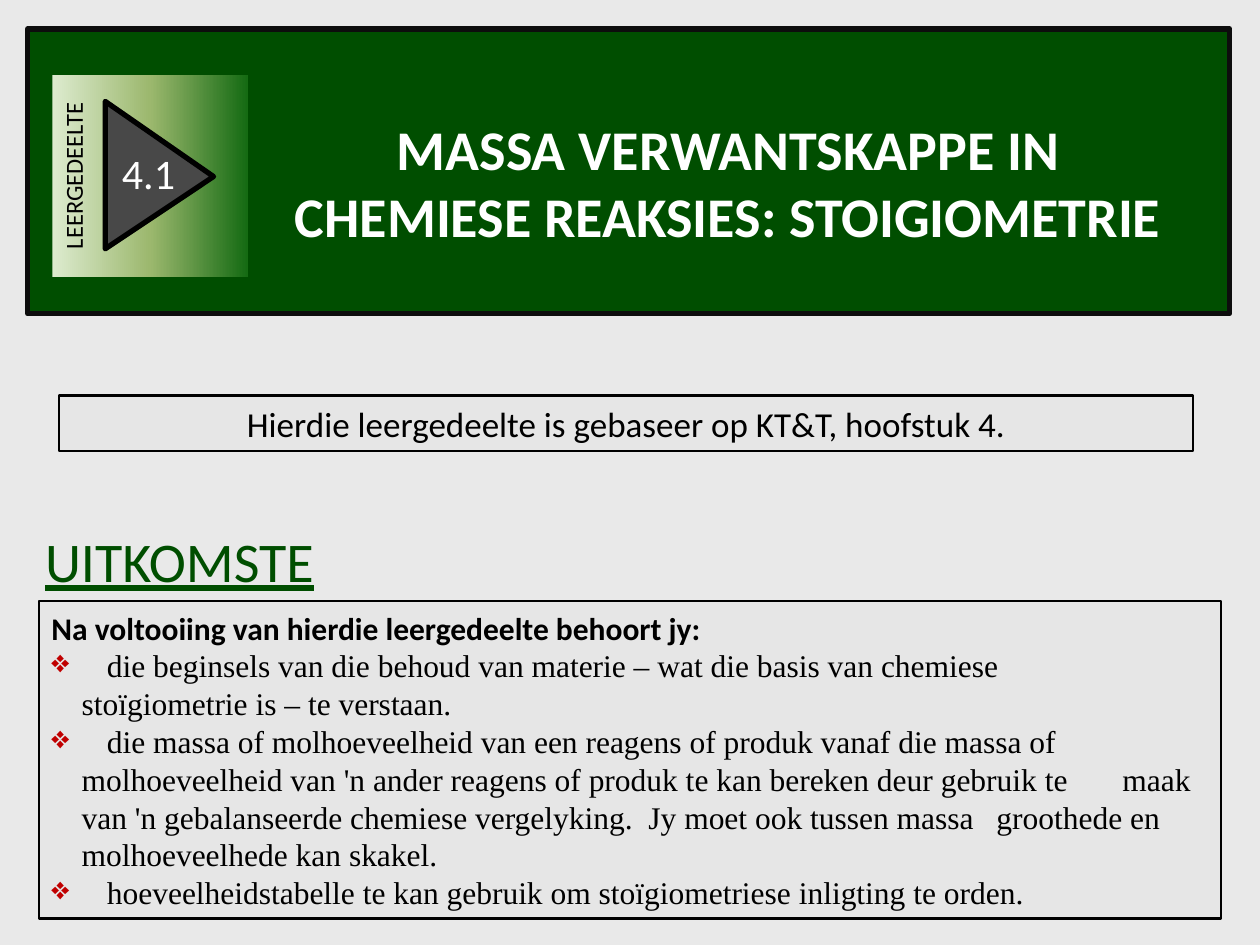
"""Build the opening slide of study section 4.1 on stoichiometry."""
from copy import deepcopy

from lxml.etree import SubElement
from pptx import Presentation
from pptx.dml.color import RGBColor
from pptx.enum.shapes import MSO_SHAPE as Shape
from pptx.enum.text import MSO_ANCHOR as Anchor, PP_ALIGN as Align
from pptx.oxml.ns import qn
from pptx.util import Inches, Pt

BACKGROUND = RGBColor(0xE9, 0xE9, 0xE9)
PANEL = RGBColor(0xE6, 0xE6, 0xE6)
GREEN = RGBColor(0x00, 0x4E, 0x00)
BANNER_EDGE = RGBColor(0x0D, 0x0D, 0x0D)
GREY = RGBColor(0x48, 0x48, 0x48)
BLACK = RGBColor(0x00, 0x00, 0x00)
WHITE = RGBColor(0xFF, 0xFF, 0xFF)
GRADIENT = [
    (0, RGBColor(0xDD, 0xEB, 0xCF)),
    (0.5, RGBColor(0x9C, 0xB8, 0x6E)),
    (1, RGBColor(0x15, 0x6B, 0x13)),
]
OUTCOMES = [
    "\tdie beginsels van die behoud van materie – wat die basis van chemiese "
    "\tstoїgiometrie is – te verstaan.",
    "\tdie massa of molhoeveelheid van een reagens of produk vanaf die massa of "
    "\tmolhoeveelheid van 'n ander reagens of produk te kan bereken deur gebruik te "
    "\tmaak van 'n gebalanseerde chemiese vergelyking.  Jy moet ook tussen massa "
    "\tgroothede en molhoeveelhede kan skakel.",
    "\thoeveelheidstabelle te kan gebruik om stoїgiometriese inligting te orden.",
]


def add_box(shapes, kind, box, fill=None, line=None, width=1.5):
    shape = shapes.add_shape(kind, *[Inches(value) for value in box])
    shape.shadow.inherit = False
    if fill is None:
        shape.fill.background()
    else:
        shape.fill.solid()
        shape.fill.fore_color.rgb = fill
    if line is None:
        shape.line.fill.background()
    else:
        shape.line.color.rgb = line
        shape.line.width = Pt(width)
    shape.text_frame.word_wrap = True
    shape.text_frame.vertical_anchor = Anchor.TOP
    return shape


def add_text(paragraph, text, size, color=BLACK, align=Align.LEFT, name="Calibri"):
    paragraph.alignment = align
    run = paragraph.add_run()
    run.text = text
    run.font.size = Pt(size)
    run.font.name = name
    run.font.color.rgb = color
    return run


presentation = Presentation()
presentation.slide_width = Inches(10)
presentation.slide_height = Inches(7.5)
slide = presentation.slides.add_slide(presentation.slide_layouts[6])
slide.background.fill.solid()
slide.background.fill.fore_color.rgb = BACKGROUND

source_note = add_box(slide.shapes, Shape.RECTANGLE, (0.47, 3.14, 9, 0.44), PANEL, BLACK)
source_note.text_frame.vertical_anchor = Anchor.MIDDLE
add_text(source_note.text_frame.paragraphs[0],
         "Hierdie leergedeelte is gebaseer op KT&T, hoofstuk 4.", 20, align=Align.CENTER)

add_box(slide.shapes, Shape.RECTANGLE, (0.22, 0.23, 9.54, 2.26), GREEN, BANNER_EDGE, 3)

title = slide.shapes.add_textbox(Inches(2.11), Inches(0.86), Inches(7.34), Inches(1.18))
title.text_frame.word_wrap = True
title_run = add_text(title.text_frame.paragraphs[0],
                     "MASSA VERWANTSKAPPE IN CHEMIESE REAKSIES: STOIGIOMETRIE",
                     32, WHITE, Align.CENTER)
title_run.font.bold = True

badge = slide.shapes.add_group_shape()
label = add_box(badge.shapes, Shape.RECTANGLE, (0.39, 0.62, 1.6, 1.55))
label.rotation = 270
label.fill.gradient()
label.fill.gradient_angle = 270
stop_list = label.element.spPr.find(qn("a:gradFill")).find(qn("a:gsLst"))
stop_list.append(deepcopy(stop_list[-1]))
for stop, (position, color) in zip(label.fill.gradient_stops, GRADIENT):
    stop.position = position
    stop.color.rgb = color
add_text(label.text_frame.paragraphs[0], "LEERGEDEELTE", 14, align=Align.CENTER)

arrow = add_box(badge.shapes, Shape.ISOSCELES_TRIANGLE, (0.68, 0.96, 1.17, 0.86), GREY, BLACK, 3)
arrow.rotation = 90
arrow.adjustments[0] = 0.51

number = badge.shapes.add_textbox(Inches(0.87), Inches(1.12), Inches(0.63), Inches(0.5))
number.text_frame.word_wrap = False
add_text(number.text_frame.paragraphs[0], "4.1", 24, WHITE)

heading = slide.shapes.add_textbox(Inches(0.26), Inches(4.13), Inches(2.67), Inches(0.64))
heading.text_frame.word_wrap = True
add_text(heading.text_frame.paragraphs[0], "UITKOMSTE", 32, GREEN).font.underline = True

outcomes = add_box(slide.shapes, Shape.RECTANGLE, (0.31, 4.77, 9.38, 2.52), PANEL, BLACK)
frame = outcomes.text_frame
frame.vertical_anchor = Anchor.MIDDLE
intro_run = add_text(frame.paragraphs[0],
                     "Na voltooiing van hierdie leergedeelte behoort jy:", 18)
intro_run.font.bold = True
for outcome in OUTCOMES:
    paragraph = frame.add_paragraph()
    add_text(paragraph, outcome, 18, name="Times New Roman")
    properties = paragraph._p.get_or_add_pPr()
    properties.set("marL", str(Inches(0.24)))
    properties.set("indent", str(Inches(-0.24)))
    bullet_color = SubElement(properties, qn("a:buClr"))
    SubElement(bullet_color, qn("a:srgbClr"), val="C00000")
    SubElement(properties, qn("a:buChar"), char="❖")
    tabs = SubElement(properties, qn("a:tabLst"))
    SubElement(tabs, qn("a:tab"), pos=str(Inches(0.44)), algn="l")

presentation.save("out.pptx")
